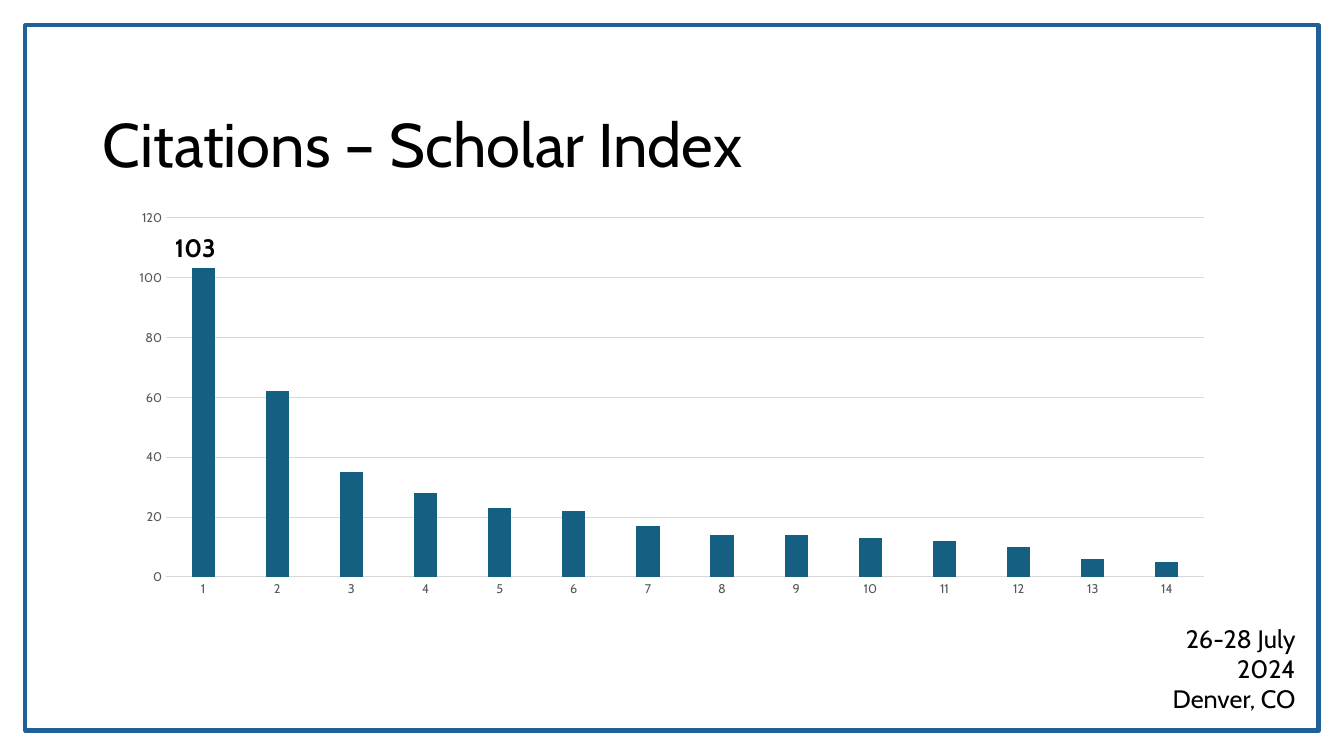
import pptx
import pptx.chart.data
import pptx.dml.color
import pptx.enum.chart
import pptx.enum.shapes
import pptx.enum.text
import pptx.util
from pptx.util import Cm

COLORS = {
    "frame": "215F9A",
    "bar": "156082",
    "text": "000000",
    "axis_text": "595959",
    "grid": "D9D9D9",
}
FONT = "Cabin"
CITATIONS = [103, 62, 35, 28, 23, 22, 17, 14, 14, 13, 12, 10, 6, 5]


def color(name):
    return pptx.dml.color.RGBColor.from_string(COLORS[name])


def style_font(font, size, name="text", bold=False):
    font.name = FONT
    font.size = pptx.util.Pt(size)
    font.bold = bold
    font.color.rgb = color(name)


def style_line(line, name, width):
    line.color.rgb = color(name)
    line.width = pptx.util.Pt(width)


def add_text(page, text, box, size, align="LEFT", anchor="TOP", bold=False,
             wrap=True, spacing=1.0):
    """Add a text box with one paragraph for each line of the text."""
    frame = page.shapes.add_textbox(*box).text_frame
    frame.word_wrap = wrap
    frame.vertical_anchor = getattr(pptx.enum.text.MSO_ANCHOR, anchor)
    for index, line in enumerate(text.split("\n")):
        para = frame.paragraphs[0] if index == 0 else frame.add_paragraph()
        para.alignment = getattr(pptx.enum.text.PP_ALIGN, align)
        para.line_spacing = spacing
        span = para.add_run()
        span.text = line
        style_font(span.font, size, bold=bold)


def add_frame(page, box):
    """Draw the border and set the event details in its lower right corner."""
    left, top, width, height = box
    border = page.shapes.add_shape(
        pptx.enum.shapes.MSO_SHAPE.RECTANGLE, *box)
    border.shadow.inherit = False
    border.fill.background()
    style_line(border.line, "frame", 3)

    event_width, event_height = Cm(4.75), Cm(1.8)
    event_box = (left + width - event_width - Cm(0.33),
                 top + height - event_height - Cm(0.3),
                 event_width, event_height)
    add_text(page, "26-28 July 2024\nDenver, CO", event_box, 18,
             align="RIGHT", anchor="BOTTOM")


def add_citation_chart(page, box):
    """Add the column chart and the label over its tallest column."""
    data = pptx.chart.data.CategoryChartData()
    data.categories = [str(rank + 1) for rank in range(len(CITATIONS))]
    data.add_series("Series 1", CITATIONS)
    chart = page.shapes.add_chart(
        pptx.enum.chart.XL_CHART_TYPE.COLUMN_CLUSTERED, *box, data).chart
    chart.has_legend = False
    chart.has_title = False
    style_font(chart.font, 10)

    plot = chart.plots[0]
    plot.gap_width = 219
    plot.overlap = -27
    plot.vary_by_categories = False
    bars = plot.series[0].format.fill
    bars.solid()
    bars.fore_color.rgb = color("bar")

    for axis in (chart.category_axis, chart.value_axis):
        axis.major_tick_mark = pptx.enum.chart.XL_TICK_MARK.NONE
        axis.minor_tick_mark = pptx.enum.chart.XL_TICK_MARK.NONE
        style_font(axis.tick_labels.font, 9, "axis_text")
    style_line(chart.category_axis.format.line, "grid", 0.75)

    values = chart.value_axis
    values.minimum_scale = 0
    values.maximum_scale = 120
    values.major_unit = 20
    values.format.line.fill.background()
    style_line(values.major_gridlines.format.line, "grid", 0.75)

    left, top = box[:2]
    label_box = (left + Cm(1.2), top + Cm(0.66), Cm(1.55), Cm(1.02))
    add_text(page, str(max(CITATIONS)), label_box, 18, bold=True, wrap=False)


def main():
    deck = pptx.Presentation()
    deck.slide_width, deck.slide_height = Cm(33.87), Cm(19.05)
    page = deck.slides.add_slide(deck.slide_layouts[6])
    margin = Cm(0.64)
    add_frame(page, (margin, margin, deck.slide_width - 2 * margin,
                     deck.slide_height - 2 * margin))
    add_text(page, "Citations – Scholar Index",
             (Cm(2.33), Cm(1.01), Cm(29.21), Cm(3.68)), 44,
             anchor="BOTTOM", spacing=0.9)
    add_citation_chart(page, (Cm(2.96), Cm(5.08), Cm(27.94), Cm(10.16)))
    deck.save("out.pptx")


if __name__ == "__main__":
    main()
